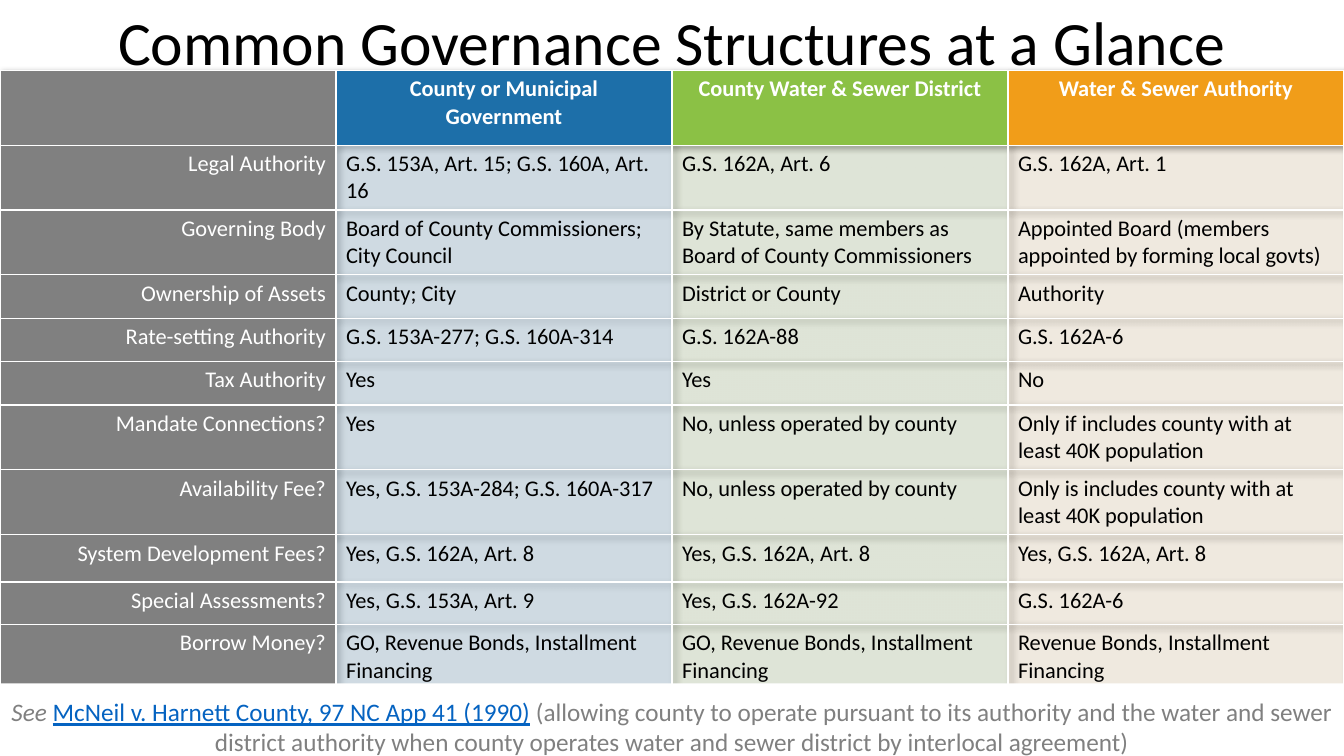
import pptx
import pptx.util
import pptx.dml.color
import pptx.enum.shapes
import pptx.enum.text
import pptx.oxml
import pptx.oxml.ns

COLORS = {
    "white": "FFFFFF", "black": "000000", "gray": "808080", "link": "0563C1",
    "blue": "1D6FA9", "green": "8BC145", "orange": "F19D19",
    "pale blue": "CAE4F6", "pale green": "D1E6B5", "pale orange": "F9D8A3",
}
FONT = "Calibri"
WIDTH, HEIGHT = 13.33, 7.5
ONE_LINE, TWO_LINES = 0.43, 0.64
ALIGN = pptx.enum.text.PP_ALIGN
MIDDLE = pptx.enum.text.MSO_ANCHOR.MIDDLE

HEADER_FILLS = ["gray", "blue", "green", "orange"]
BODY_FILLS = [("gray", 100), ("pale blue", 43), ("pale green", 27), ("pale orange", 18)]
HEADER = ["", "County or Municipal\vGovernment", "County Water & Sewer District",
          "Water & Sewer Authority"]
TOPICS = [
    (TWO_LINES, "Legal Authority", "G.S. 153A, Art. 15; G.S. 160A, Art. 16",
     "G.S. 162A, Art. 6", "G.S. 162A, Art. 1"),
    (TWO_LINES, "Governing Body", "Board of County Commissioners;\nCity Council",
     "By Statute, same members as Board of County Commissioners",
     "Appointed Board (members appointed by forming local govts)"),
    (ONE_LINE, "Ownership of Assets", "County; City", "District or County", "Authority"),
    (ONE_LINE, "Rate-setting Authority", "G.S. 153A-277; G.S. 160A-314",
     "G.S. 162A-88", "G.S. 162A-6"),
    (ONE_LINE, "Tax Authority", "Yes", "Yes", "No"),
    (TWO_LINES, "Mandate Connections?", "Yes", "No, unless operated by county",
     "Only if includes county with at least 40K population"),
    (TWO_LINES, "Availability Fee?", "Yes, G.S. 153A-284; G.S. 160A-317",
     "No, unless operated by county",
     "Only is includes county with at least 40K population"),
    (0.47, "System Development Fees?", "Yes, G.S. 162A, Art. 8",
     "Yes, G.S. 162A, Art. 8", "Yes, G.S. 162A, Art. 8"),
    (0.42, "Special Assessments?", "Yes, G.S. 153A, Art. 9",
     "Yes, G.S. 162A-92", "G.S. 162A-6"),
    (TWO_LINES, "Borrow Money?", "GO, Revenue Bonds, Installment Financing",
     "GO, Revenue Bonds, Installment Financing", "Revenue Bonds, Installment Financing"),
]


def rgb(name):
    return pptx.dml.color.RGBColor.from_string(COLORS[name])


def inches(box):
    return [pptx.util.Inches(length) for length in box]


def set_font(font, size, color, bold=False):
    font.name = FONT
    font.size = pptx.util.Pt(size)
    font.color.rgb = rgb(color)
    font.bold = bold


def fill_cell(cell, text, color, opacity, align, text_color, bold):
    cell.fill.solid()
    cell.fill.fore_color.rgb = rgb(color)
    if opacity < 100:
        tint = cell._tc.tcPr.find(".//" + pptx.oxml.ns.qn("a:srgbClr"))
        tint.append(pptx.oxml.parse_xml(
            f'<a:alpha {pptx.oxml.ns.nsdecls("a")} val="{opacity * 1000}"/>'))
    cell.text = text
    for para in cell.text_frame.paragraphs:
        para.alignment = align
        set_font(para.font, 16, text_color, bold)


def add_title(slide, box):
    title = slide.shapes.title
    title.left, title.top, title.width, title.height = inches(box)
    title.text_frame.text = "Common Governance Structures at a Glance"
    title.text_frame.vertical_anchor = MIDDLE
    para = title.text_frame.paragraphs[0]
    para.alignment = ALIGN.CENTER
    para.line_spacing = 0.9
    set_font(para.font, 44, "black")


def add_comparison(slide, box):
    frame = slide.shapes.add_table(len(TOPICS) + 1, len(HEADER), *inches(box))
    table = frame.table
    table.horz_banding = False
    table._tbl.tblPr.insert(0, pptx.oxml.parse_xml(
        f'<a:effectLst {pptx.oxml.ns.nsdecls("a")}>'
        '<a:outerShdw blurRad="50800" dist="38100" dir="2700000" algn="tl" rotWithShape="0">'
        '<a:srgbClr val="000000"><a:alpha val="40000"/></a:srgbClr>'
        '</a:outerShdw></a:effectLst>'))
    table.rows[0].height = pptx.util.Inches(0.74)
    for column, (text, color) in enumerate(zip(HEADER, HEADER_FILLS)):
        fill_cell(table.cell(0, column), text, color, 100, ALIGN.CENTER, "white", True)
    for row, (height, *texts) in enumerate(TOPICS, start=1):
        table.rows[row].height = pptx.util.Inches(height)
        for column, (text, (color, opacity)) in enumerate(zip(texts, BODY_FILLS)):
            align, text_color = (ALIGN.LEFT, "black") if column else (ALIGN.RIGHT, "white")
            fill_cell(table.cell(row, column), text, color, opacity, align, text_color, False)


def add_case_note(slide, box):
    note = slide.shapes.add_shape(pptx.enum.shapes.MSO_SHAPE.RECTANGLE, *inches(box))
    note.shadow.inherit = False
    note.fill.solid()
    note.fill.fore_color.rgb = rgb("white")
    note.line.fill.background()
    note.text_frame.word_wrap = True
    note.text_frame.vertical_anchor = MIDDLE
    para = note.text_frame.paragraphs[0]
    para.alignment = ALIGN.CENTER
    set_font(para.font, 18, "gray")
    lead, case, remark = [para.add_run() for _ in range(3)]
    lead.text = "See "
    case.text = "McNeil v. Harnett County, 97 NC App 41 (1990)"
    remark.text = (" (allowing county to operate pursuant to its authority and the water and "
                   "sewer district authority when county operates water and sewer district "
                   "by interlocal agreement)")
    for span, color in ((lead, "gray"), (case, "link"), (remark, "gray")):
        set_font(span.font, 18, color)
    lead.font.italic = True
    case.font.underline = True


def main():
    deck = pptx.Presentation()
    deck.slide_width, deck.slide_height = inches((WIDTH, HEIGHT))
    slide = deck.slides.add_slide(deck.slide_layouts[5])
    add_title(slide, (0.92, 0.02, 11.5, 0.86))
    table_height = 0.74 + sum(topic[0] for topic in TOPICS)
    add_comparison(slide, (0, 0.7, WIDTH, table_height))
    add_case_note(slide, (0, 6.78, WIDTH, 0.86))
    deck.save("out.pptx")


if __name__ == "__main__":
    main()
